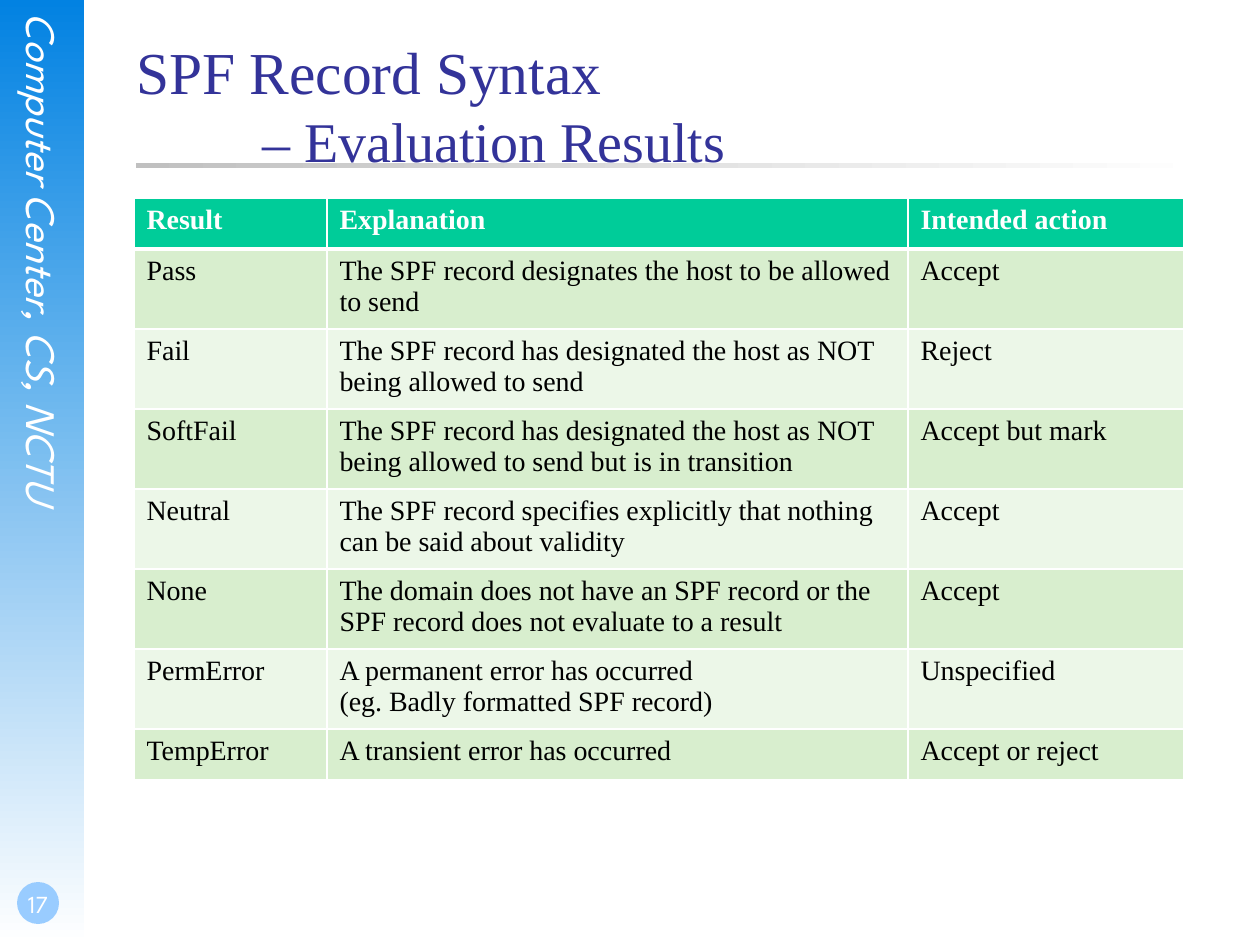
from lxml.etree import SubElement
from pptx import Presentation
from pptx.dml.color import RGBColor
from pptx.enum.shapes import MSO_SHAPE
from pptx.enum.text import MSO_ANCHOR, PP_ALIGN
from pptx.oxml.ns import qn
from pptx.util import Pt

PX = 914400 / 126
WHITE = RGBColor(0xFF, 0xFF, 0xFF)
BLACK = RGBColor(0, 0, 0)
SKY = RGBColor(0x02, 0x82, 0xE2)
BADGE = RGBColor(0x99, 0xCC, 0xFF)
GREY = RGBColor(0xC0, 0xC0, 0xC0)
NAVY = RGBColor(0x33, 0x33, 0x99)
TEAL = RGBColor(0x00, 0xCC, 0x99)
BANDS = (RGBColor(0xD8, 0xEE, 0xCE), RGBColor(0xEC, 0xF7, 0xE8))
SERIF, SANS = "Times New Roman", "League Spartan"

COLUMNS = (193, 581, 276)
RESULTS = (
    ("Result", "Explanation", "Intended action"),
    ("Pass", "The SPF record designates the host to be allowed to send", "Accept"),
    ("Fail", "The SPF record has designated the host as NOT being allowed to send", "Reject"),
    ("SoftFail", "The SPF record has designated the host as NOT being allowed to send "
     "but is in transition", "Accept but mark"),
    ("Neutral", "The SPF record specifies explicitly that nothing can be said about validity",
     "Accept"),
    ("None", "The domain does not have an SPF record or the SPF record does not evaluate "
     "to a result", "Accept"),
    ("PermError", "A permanent error has occurred\v(eg. Badly formatted SPF record)",
     "Unspecified"),
    ("TempError", "A transient error has occurred", "Accept or reject"),
)


def px(n):
    return round(n * PX)


def box(*lengths):
    return [px(n) for n in lengths]


def set_font(font, name, size, color):
    font.name, font.size = name, Pt(size)
    font.color.rgb = color


def set_margins(tf, left=0, top=0, right=0, bottom=0):
    tf.margin_left, tf.margin_top, tf.margin_right, tf.margin_bottom = box(
        left, top, right, bottom)


def add_plain_shape(s, kind, x, y, w, h):
    sp = s.shapes.add_shape(kind, *box(x, y, w, h))
    sp.shadow.inherit = False
    sp.line.fill.background()
    return sp


def add_fade(s, x, y, w, h, color, angle):
    """Add a bar that fades from color to white."""
    fill = add_plain_shape(s, MSO_SHAPE.RECTANGLE, x, y, w, h).fill
    fill.gradient()
    fill.gradient_angle = angle
    for stop, rgb, position in zip(fill.gradient_stops, (color, WHITE), (0, 1)):
        stop.color.rgb = rgb
        stop.position = position


def add_label(s, x, y, w, h, text, size):
    tf = s.shapes.add_textbox(*box(x, y, w, h)).text_frame
    set_margins(tf)
    tf.word_wrap = True
    p = tf.paragraphs[0]
    p.text = text
    set_font(p.font, SANS, size, WHITE)
    return tf


def add_sidebar(s, x, y, w, h):
    add_fade(s, x, y, w, h, SKY, 270)
    tf = add_label(s, x + 19, y + 13, 50, 644, "Computer Center, CS, NCTU", 24)
    tf._txBody.bodyPr.set("vert", "eaVert")
    tf.paragraphs[0].font.italic = True

    badge = add_plain_shape(s, MSO_SHAPE.OVAL, x + 17, y + h - 63, 42, 42)
    badge.fill.solid()
    badge.fill.fore_color.rgb = BADGE
    tf = add_label(s, x, y + h - 84, 73, 63, "17", 14)
    set_margins(tf, left=3, bottom=6)
    tf.vertical_anchor = MSO_ANCHOR.BOTTOM
    tf.paragraphs[0].alignment = PP_ALIGN.CENTER


def add_tab_stop(p, position):
    tabs = SubElement(p._p.get_or_add_pPr(), qn("a:tabLst"))
    SubElement(tabs, qn("a:tab"), pos=str(px(position)), algn="l")


def add_title(s, x, y, w, h):
    add_fade(s, x, y + 128, w, 5, GREY, 0)
    title = s.shapes.title
    title.left, title.top, title.width, title.height = box(x, y, w, h)
    s.shapes._spTree.append(title._element)  # text goes in front of the rule
    tf = title.text_frame
    set_margins(tf)
    tf.word_wrap = True
    tf.vertical_anchor = MSO_ANCHOR.TOP
    p = tf.paragraphs[0]
    p.alignment = PP_ALIGN.LEFT
    add_tab_stop(p, 126)
    set_font(p.font, SERIF, 34, NAVY)
    p.add_run().text = "SPF Record Syntax"
    p.add_line_break()
    r = p.add_run()
    r.text = "\t– Evaluation Results"
    r.font.size = Pt(32)


def set_borders(cell, top, bottom):
    tcPr = cell._tc.get_or_add_tcPr()
    for side, width in (("L", 1), ("R", 1), ("T", top), ("B", bottom)):
        ln = SubElement(tcPr, qn(f"a:ln{side}"), w=str(Pt(width)))
        fill = SubElement(ln, qn("a:solidFill"))
        SubElement(fill, qn("a:srgbClr"), val=str(WHITE))


def add_results_table(s, x, y, row_h, tall_row_h):
    heights = [row_h] + [tall_row_h] * (len(RESULTS) - 2) + [row_h]
    table = s.shapes.add_table(len(RESULTS), len(COLUMNS),
                               *box(x, y, sum(COLUMNS), sum(heights))).table
    for column, width in zip(table.columns, COLUMNS):
        column.width = px(width)
    for i, (row, height, texts) in enumerate(zip(table.rows, heights, RESULTS)):
        row.height = px(height)
        header = i == 0
        for cell, text in zip(row.cells, texts):
            set_borders(cell, 3 if i == 1 else 1, 3 if header else 1)
            cell.fill.solid()
            cell.fill.fore_color.rgb = TEAL if header else BANDS[(i - 1) % 2]
            p = cell.text_frame.paragraphs[0]
            p.text = text
            set_font(p.font, SERIF, 16, WHITE if header else BLACK)
            p.font.bold = header


def main():
    prs = Presentation()
    prs.slide_width, prs.slide_height = box(1260, 945)
    s = prs.slides.add_slide(prs.slide_layouts[5])
    add_sidebar(s, 0, 0, 84, 945)
    add_title(s, 136, 35, 1071, 157)
    add_results_table(s, 134, 198, 51, 80)
    prs.save("out.pptx")


if __name__ == "__main__":
    main()
